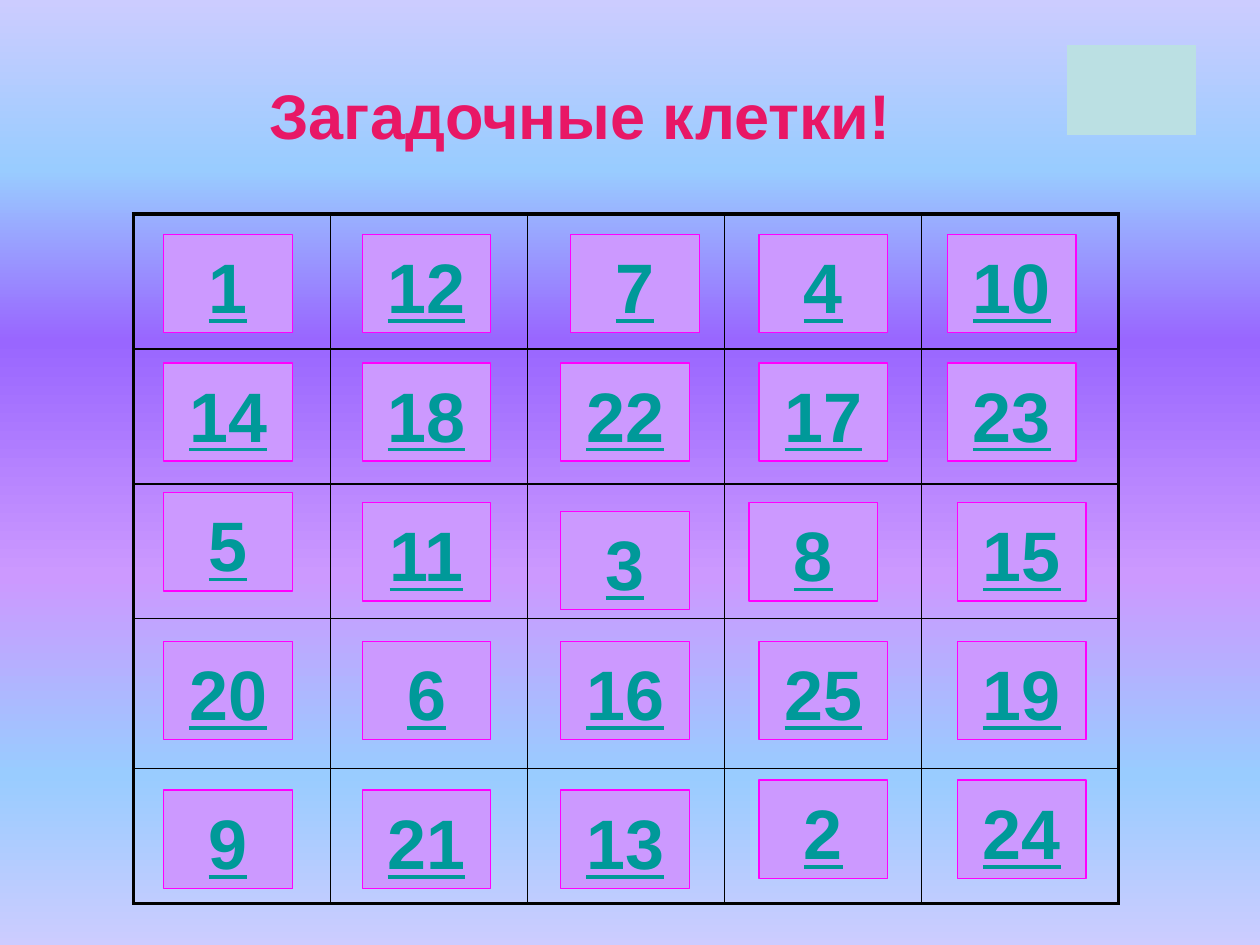
"""Build the "Загадочные клетки!" slide: a five by five board of numbered tiles."""
from lxml import etree
from pptx import Presentation
from pptx.dml.color import RGBColor
from pptx.enum import shapes, text
from pptx.oxml import ns
from pptx.util import Inches, Pt

BLACK = RGBColor(0x00, 0x00, 0x00)
CRIMSON = RGBColor(0xE8, 0x17, 0x66)
LILAC = RGBColor(0xCC, 0x99, 0xFF)
MAGENTA = RGBColor(0xFF, 0x00, 0xFF)
TEAL = RGBColor(0x00, 0x99, 0x99)
PALE_TEAL = RGBColor(0xBB, 0xE0, 0xE3)
PERIWINKLE = RGBColor(0xCC, 0xCC, 0xFF)
SKY = RGBColor(0x99, 0xCC, 0xFF)
VIOLET = RGBColor(0x99, 0x66, 0xFF)

SKY_STOPS = [(0, PERIWINKLE), (18, SKY), (36, VIOLET), (61, LILAC), (82, SKY), (100, PERIWINKLE)]
NUMBERS = [
    [1, 12, 7, 4, 10],
    [14, 18, 22, 17, 23],
    [5, 11, 3, 8, 15],
    [20, 6, 16, 25, 19],
    [9, 21, 13, 2, 24],
]
ROW_HEIGHTS = [1.07, 1.07, 1.07, 1.19, 1.07]
TILE_TOPS = [1.86, 2.88, 3.99, 5.09, 6.27]
NUDGES = {
    7: (0.08, 0), 10: (-0.08, 0), 23: (-0.08, 0), 8: (-0.08, 0),
    5: (0, -0.08), 3: (0, 0.07), 2: (0, -0.08), 24: (0, -0.08),
}


def add_color(parent, color):
    etree.SubElement(parent, ns.qn("a:srgbClr"), val=str(color))


def add_border(cell, side, width):
    properties = cell._tc.get_or_add_tcPr()
    border = etree.SubElement(properties, ns.qn(f"a:ln{side}"), w=str(Pt(width)))
    add_color(etree.SubElement(border, ns.qn("a:solidFill")), BLACK)


prs = Presentation()
prs.slide_width, prs.slide_height = Inches(10), Inches(7.5)
slide = prs.slides.add_slide(prs.slide_layouts[5])

backdrop = slide.background.fill
backdrop.gradient()
backdrop.gradient_angle = 270
stops = slide.element.find(".//" + ns.qn("a:gsLst"))
for stop in list(stops):
    stops.remove(stop)
for position, color in SKY_STOPS:
    add_color(etree.SubElement(stops, ns.qn("a:gs"), pos=str(position * 1000)), color)

title = slide.shapes.title
title.left, title.top = Inches(1.06), Inches(0.52)
title.width, title.height = Inches(7.09), Inches(0.87)
title.text_frame.text = "Загадочные клетки!"
title.text_frame.word_wrap = False
title.text_frame.vertical_anchor = text.MSO_ANCHOR.MIDDLE
title.text_frame.margin_bottom = Inches(0.15)
heading = title.text_frame.paragraphs[0]
heading.alignment = text.PP_ALIGN.CENTER
heading_font = heading.runs[0].font
heading_font.name, heading_font.size, heading_font.bold = "Arial", Pt(36), True
heading_font.color.rgb = CRIMSON

board = slide.shapes.add_table(
    5, 5, Inches(1.06), Inches(1.7), Inches(7.82), Inches(sum(ROW_HEIGHTS))
).table
board.first_row = board.horz_banding = False
for row, height in zip(board.rows, ROW_HEIGHTS):
    row.height = Inches(height)
for r in range(5):
    for c in range(5):
        cell = board.cell(r, c)
        for side, outer in (("L", c == 0), ("R", c == 4), ("T", r == 0), ("B", r == 4)):
            add_border(cell, side, 2.25 if outer else 1)
        cell.fill.background()

for r, numbers in enumerate(NUMBERS):
    for c, number in enumerate(numbers):
        dx, dy = NUDGES.get(number, (0, 0))
        tile = slide.shapes.add_shape(
            shapes.MSO_SHAPE.RECTANGLE,
            Inches(1.3 + c * 6.3 / 4 + dx), Inches(TILE_TOPS[r] + dy),
            Inches(1.02), Inches(0.78),
        )
        tile.shadow.inherit = False
        tile.fill.solid()
        tile.fill.fore_color.rgb = LILAC
        tile.line.color.rgb = MAGENTA
        tile.line.width = Pt(0.75)
        tile.text_frame.text = str(number)
        tile.text_frame.vertical_anchor = text.MSO_ANCHOR.BOTTOM
        tile.text_frame.margin_bottom = Inches(0.04)
        label = tile.text_frame.paragraphs[0]
        label.alignment = text.PP_ALIGN.CENTER
        label_font = label.runs[0].font
        label_font.name, label_font.size = "Arial", Pt(40)
        label_font.bold = label_font.underline = True
        label_font.color.rgb = TEAL

button = slide.shapes.add_shape(
    shapes.MSO_SHAPE.ACTION_BUTTON_CUSTOM,
    Inches(8.47), Inches(0.36), Inches(1.02), Inches(0.71),
)
button.shadow.inherit = False
button.fill.solid()
button.fill.fore_color.rgb = PALE_TEAL
button.line.fill.background()

prs.save("out.pptx")
